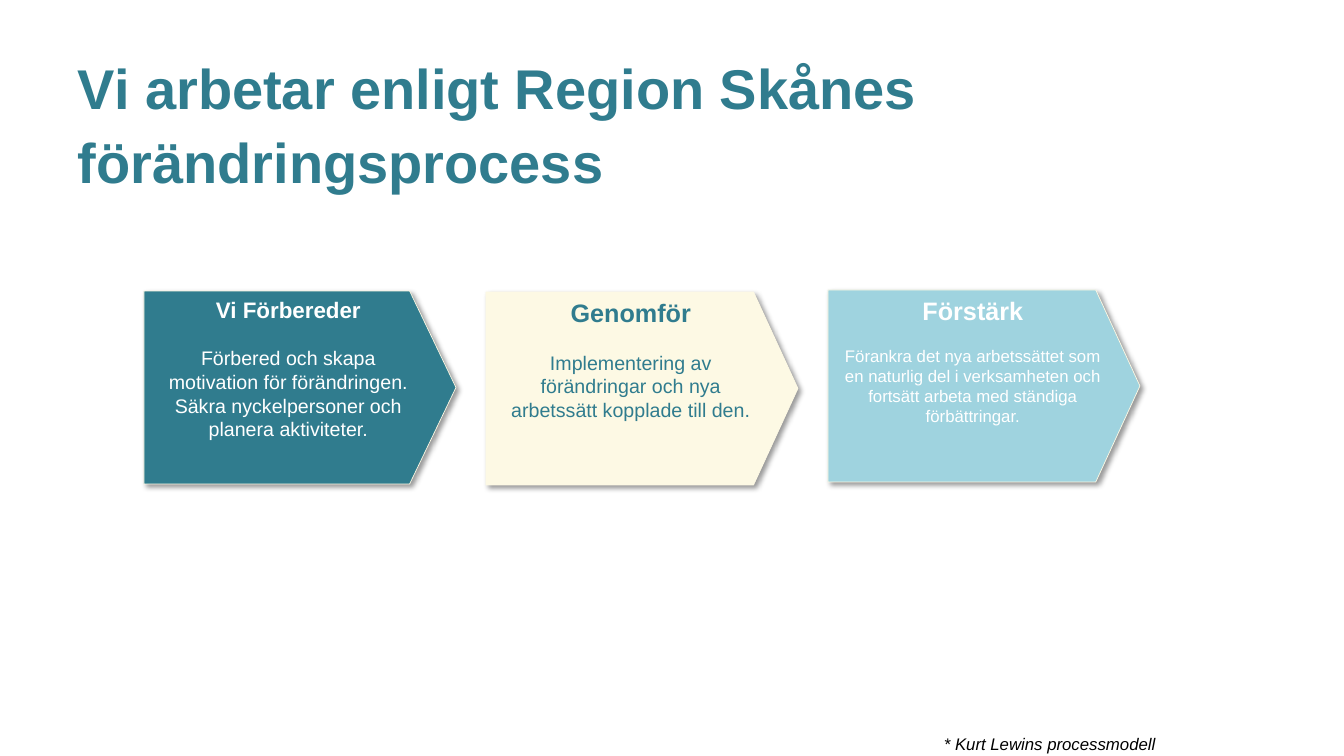
"""Build the slide about the three steps of the change process."""
from lxml import etree
from pptx import Presentation
from pptx.dml.color import RGBColor
from pptx.enum.shapes import MSO_SHAPE
from pptx.enum.text import MSO_ANCHOR, PP_ALIGN
from pptx.oxml.ns import qn
from pptx.util import Pt

TEAL = RGBColor(0x30, 0x7C, 0x8E)
CREAM = RGBColor(0xFD, 0xF9, 0xE4)
LIGHT_BLUE = RGBColor(0x9F, 0xD3, 0xDF)
WHITE = RGBColor(0xFF, 0xFF, 0xFF)
BLACK = RGBColor(0x00, 0x00, 0x00)
PENTAGON = MSO_SHAPE.PENTAGON
TOP, MIDDLE = MSO_ANCHOR.TOP, MSO_ANCHOR.MIDDLE
LEFT, CENTER = PP_ALIGN.LEFT, PP_ALIGN.CENTER

TITLE = "Vi arbetar enligt Region Skånes förändringsprocess"
FOOTNOTE = "* Kurt Lewins processmodell"
STEPS = [
    {"heading": "Vi Förbereder", "heading_size": 16, "body_size": 14,
     "body": "Förbered och skapa motivation för förändringen. "
             "Säkra nyckelpersoner och planera aktiviteter.",
     "fill": TEAL, "color": WHITE, "top": 291, "height": 193, "point": 0.24},
    {"heading": "Genomför", "heading_size": 18, "body_size": 14,
     "body": "Implementering av förändringar och nya "
             "arbetssätt kopplade till den.",
     "fill": CREAM, "color": TEAL, "top": 292, "height": 193, "point": 0.23},
    {"heading": "Förstärk", "heading_size": 18, "body_size": 12,
     "body": "Förankra det nya arbetssättet som en naturlig del i "
             "verksamheten och fortsätt arbeta med ständiga förbättringar.",
     "fill": LIGHT_BLUE, "color": WHITE, "top": 290, "height": 192, "point": 0.23},
]
STEP_LEFT, STEP_WIDTH, STEP_PITCH = 144, 312, 342
BLANK_LINE = 1.2


def px(length):
    """Turn px into EMU."""
    return round(length * 914400 / 100.8)


def write(paragraph, text, size=12, color=BLACK, bold=False, italic=False,
          align=LEFT, before=0, spacing=1.0):
    """Write one formatted paragraph."""
    paragraph.alignment = align
    paragraph.line_spacing = spacing
    if before:
        paragraph.space_before = Pt(before)
    run = paragraph.add_run()
    run.text = text
    run.font.name = "Arial"
    run.font.size = Pt(size)
    run.font.color.rgb = color
    run.font.bold = bold
    run.font.italic = italic


def add_text_box(slide, left, top, width, height, text, wrap=True, anchor=TOP, **style):
    """Add a text box holding one paragraph."""
    box = slide.shapes.add_textbox(px(left), px(top), px(width), px(height))
    box.text_frame.word_wrap = wrap
    box.text_frame.vertical_anchor = anchor
    write(box.text_frame.paragraphs[0], text, **style)


def add_shadow(shape):
    """Give the shape a soft shadow to the lower right."""
    shape.shadow.inherit = False
    effects = shape._element.spPr.find(qn("a:effectLst"))
    shadow = etree.SubElement(effects, qn("a:outerShdw"), blurRad=str(Pt(4)),
                              dist=str(Pt(3)), dir="2700000", algn="tl", rotWithShape="0")
    color = etree.SubElement(shadow, qn("a:srgbClr"), val=str(BLACK))
    etree.SubElement(color, qn("a:alpha"), val="40000")


def add_step(slide, left, step):
    """Add one process arrow with its heading and body."""
    shape = slide.shapes.add_shape(PENTAGON, px(left), px(step["top"]),
                                   px(STEP_WIDTH), px(step["height"]))
    shape.adjustments[0] = step["point"]
    shape.fill.solid()
    shape.fill.fore_color.rgb = step["fill"]
    shape.line.color.rgb = CREAM
    shape.line.width = Pt(0.5)
    add_shadow(shape)
    frame = shape.text_frame
    frame.word_wrap = True
    frame.vertical_anchor = TOP
    write(frame.paragraphs[0], step["heading"], size=step["heading_size"],
          color=step["color"], bold=True, align=CENTER)
    write(frame.add_paragraph(), step["body"], size=step["body_size"],
          color=step["color"], align=CENTER, before=BLANK_LINE * step["body_size"])


def main():
    """Build and save the presentation."""
    presentation = Presentation()
    presentation.slide_width, presentation.slide_height = px(1344), px(756)
    slide = presentation.slides.add_slide(presentation.slide_layouts[6])
    add_text_box(slide, 68, 39, 1210, 164, TITLE, anchor=MIDDLE,
                 size=40, color=TEAL, bold=True, spacing=1.1)
    add_text_box(slide, 934, 729, 234, 30, FOOTNOTE, wrap=False, italic=True)
    for index, step in enumerate(STEPS):
        add_step(slide, STEP_LEFT + index * STEP_PITCH, step)
    presentation.save("out.pptx")


if __name__ == "__main__":
    main()
